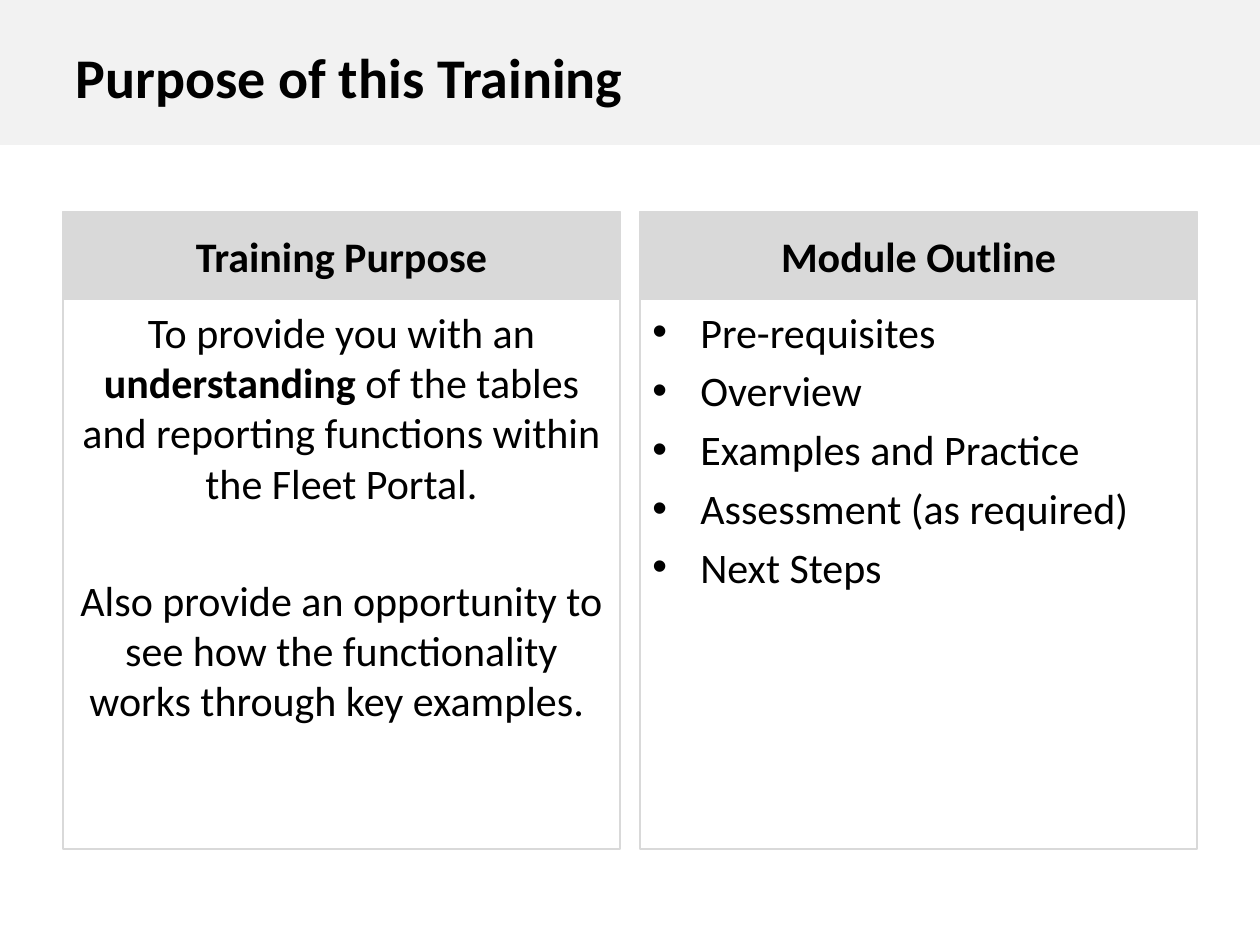
from dataclasses import dataclass

from lxml.etree import SubElement
from pptx import Presentation
from pptx.dml.color import RGBColor
from pptx.enum.shapes import MSO_SHAPE
from pptx.enum.text import MSO_ANCHOR, PP_ALIGN
from pptx.oxml.ns import qn
from pptx.util import Inches, Pt


@dataclass(frozen=True)
class Theme:
    font: str = "Calibri"
    ink: RGBColor = RGBColor(0x00, 0x00, 0x00)
    band: RGBColor = RGBColor(0xF2, 0xF2, 0xF2)
    head: RGBColor = RGBColor(0xD9, 0xD9, 0xD9)
    title: int = 32
    body: int = 24
    gap: float = 4.8


THEME = Theme()


def add_bullet(para, indent):
    props = para._p.get_or_add_pPr()
    props.set("marL", str(indent))
    props.set("indent", str(-indent))
    SubElement(props, qn("a:buFont"), typeface="Arial")
    SubElement(props, qn("a:buChar"), char="•")


def write(shape, paras, size=THEME.body, bold=False, align=PP_ALIGN.LEFT,
          anchor=MSO_ANCHOR.TOP, gap=THEME.gap, bullet=False):
    """Fill a shape with paragraphs, each a list of (text, bold) runs or a string."""
    frame = shape.text_frame
    frame.word_wrap = True
    frame.vertical_anchor = anchor
    for i, runs in enumerate(paras):
        para = frame.paragraphs[0] if i == 0 else frame.add_paragraph()
        para.alignment = align
        if i:
            para.space_before = Pt(gap)
        if bullet:
            add_bullet(para, Inches(0.38))
        for text, strong in [(runs, bold)] if isinstance(runs, str) else runs:
            run = para.add_run()
            run.text = text
            font = run.font
            font.name, font.size, font.bold = THEME.font, Pt(size), strong
            font.color.rgb = THEME.ink


def add_box(slide, box, fill=None, line=None):
    shape = slide.shapes.add_shape(MSO_SHAPE.RECTANGLE, *map(Inches, box))
    shape.shadow.inherit = False
    if fill is None:
        shape.fill.background()
    else:
        shape.fill.solid()
        shape.fill.fore_color.rgb = fill
    if line is None:
        shape.line.fill.background()
    else:
        shape.line.color.rgb = line
        shape.line.width = Pt(0.75)
    return shape


def add_title(slide, box, text):
    x, y, w, h = box
    add_box(slide, box, fill=THEME.band)
    label = slide.shapes.add_textbox(
        Inches(x + 0.5), Inches(y + 0.29), Inches(w - 1), Inches(h - 0.29))
    write(label, [text], size=THEME.title, bold=True)


def add_panel(slide, box, head, paras, **style):
    """Place a shaded heading on top of an outlined body."""
    x, y, w, h = box
    top = 0.7
    cap = add_box(slide, (x, y, w, top), fill=THEME.head, line=THEME.head)
    write(cap, [head], bold=True, align=PP_ALIGN.CENTER, anchor=MSO_ANCHOR.MIDDLE)
    body = add_box(slide, (x, y + top, w, h - top), line=THEME.head)
    write(body, paras, **style)


def main():
    deck = Presentation()
    deck.slide_width, deck.slide_height = Inches(10), Inches(7.5)
    slide = deck.slides.add_slide(deck.slide_layouts[6])

    add_title(slide, (0, 0, 10, 1.15), "Purpose of this Training")

    purpose = [
        [("To provide you with an ", False),
         ("understanding", True),
         (" of the tables and reporting functions within the Fleet Portal.", False)],
        "Also provide an opportunity to see how the functionality "
        "works through key examples. ",
    ]
    outline = ["Pre-requisites", "Overview", "Examples and Practice",
               "Assessment (as required)", "Next Steps"]
    panels = [
        ("Training Purpose", purpose, dict(align=PP_ALIGN.CENTER, gap=38)),
        ("Module Outline", outline, dict(bullet=True)),
    ]
    left, width, space = 0.5, 4.42, 0.16
    for i, (head, paras, style) in enumerate(panels):
        box = (left + i * (width + space), 1.68, width, 5.06)
        add_panel(slide, box, head, paras, **style)

    deck.save("out.pptx")


if __name__ == "__main__":
    main()
